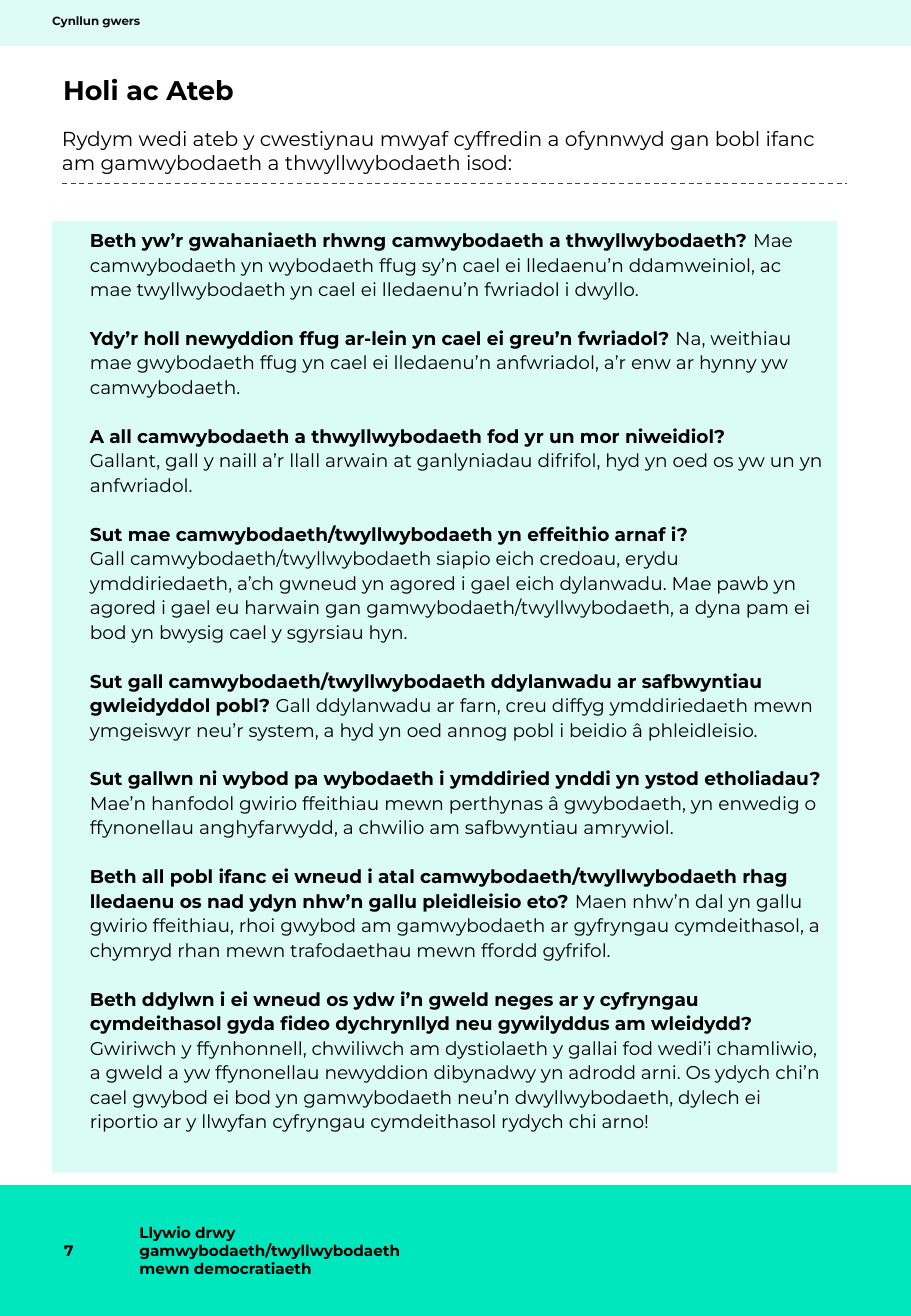
from pptx import Presentation
from pptx.dml.color import RGBColor
from pptx.enum.dml import MSO_LINE
from pptx.enum.shapes import MSO_CONNECTOR, MSO_SHAPE
from pptx.enum.text import MSO_ANCHOR as Anchor
from pptx.oxml.ns import qn
from pptx.util import Inches, Pt
from lxml.etree import SubElement

THEME = {
    "font": "Montserrat",
    "mint": "00E7BD", "black": "000000", "label": "0C0C0C", "rule": "404040",
    "label_size": 7, "footer_size": 9, "answer_size": 11,
    "intro_size": 12, "title_size": 16,
}

# Page grid
WIDTH, HEIGHT = 7.5, 10.84
MARGIN, CONTENT = 0.43, 6.46
TEXT_LEFT = MARGIN + 0.08
FOOTER_HEIGHT = 1.08
FOOTER_TOP = HEIGHT - FOOTER_HEIGHT
RULE_TOP = 1.51

# Question, answer, and whether the answer starts on its own line
QUESTIONS = [
    ("Beth yw’r gwahaniaeth rhwng camwybodaeth a thwyllwybodaeth?",
     "Mae camwybodaeth yn wybodaeth ffug sy’n cael ei lledaenu’n ddamweiniol, ac mae "
     "twyllwybodaeth yn cael ei lledaenu’n fwriadol i dwyllo.", False),
    ("Ydy’r holl newyddion ffug ar-lein yn cael ei greu’n fwriadol?",
     "Na, weithiau mae gwybodaeth ffug yn cael ei lledaenu’n anfwriadol, a’r enw ar hynny "
     "yw camwybodaeth.", False),
    ("A all camwybodaeth a thwyllwybodaeth fod yr un mor niweidiol?",
     "Gallant, gall y naill a’r llall arwain at ganlyniadau difrifol, hyd yn oed os yw un "
     "yn anfwriadol.", True),
    ("Sut mae camwybodaeth/twyllwybodaeth yn effeithio arnaf i?",
     "Gall camwybodaeth/twyllwybodaeth siapio eich credoau, erydu ymddiriedaeth, a’ch gwneud "
     "yn agored i gael eich dylanwadu. Mae pawb yn agored i gael eu harwain gan "
     "gamwybodaeth/twyllwybodaeth, a dyna pam ei bod yn bwysig cael y sgyrsiau hyn.", True),
    ("Sut gall camwybodaeth/twyllwybodaeth ddylanwadu ar safbwyntiau gwleidyddol pobl?",
     "Gall ddylanwadu ar farn, creu diffyg ymddiriedaeth mewn ymgeiswyr neu’r system, a hyd "
     "yn oed annog pobl i beidio â phleidleisio.", False),
    ("Sut gallwn ni wybod pa wybodaeth i ymddiried ynddi yn ystod etholiadau?",
     "Mae’n hanfodol gwirio ffeithiau mewn perthynas â gwybodaeth, yn enwedig o ffynonellau "
     "anghyfarwydd, a chwilio am safbwyntiau amrywiol.", False),
    ("Beth all pobl ifanc ei wneud i atal camwybodaeth/twyllwybodaeth rhag lledaenu os nad "
     "ydyn nhw’n gallu pleidleisio eto?",
     "Maen nhw’n dal yn gallu gwirio ffeithiau, rhoi gwybod am gamwybodaeth ar gyfryngau "
     "cymdeithasol, a chymryd rhan mewn trafodaethau mewn ffordd gyfrifol.", False),
    ("Beth ddylwn i ei wneud os ydw i’n gweld neges ar y cyfryngau cymdeithasol gyda fideo "
     "dychrynllyd neu gywilyddus am wleidydd?",
     "Gwiriwch y ffynhonnell, chwiliwch am dystiolaeth y gallai fod wedi’i chamliwio, a gweld "
     "a yw ffynonellau newyddion dibynadwy yn adrodd arni. Os ydych chi’n cael gwybod ei bod "
     "yn gamwybodaeth neu’n dwyllwybodaeth, dylech ei riportio ar y llwyfan cyfryngau "
     "cymdeithasol rydych chi arno!", False),
]


def add_panel(left, top, width, height, opacity):
    shape = slide.shapes.add_shape(
        MSO_SHAPE.RECTANGLE, Inches(left), Inches(top), Inches(width), Inches(height))
    shape.shadow.inherit = False
    shape.line.fill.background()
    shape.fill.solid()
    shape.fill.fore_color.rgb = RGBColor.from_string(THEME["mint"])
    if opacity < 100:
        color = shape.fill._xPr.find(".//" + qn("a:srgbClr"))
        SubElement(color, qn("a:alpha"), val=str(opacity * 1000))
    return shape


def add_run(paragraph, text, size, bold, color="black"):
    run = paragraph.add_run()
    run.text = text
    run.font.name = THEME["font"]
    run.font.size = Pt(THEME[size])
    run.font.bold = bold
    run.font.color.rgb = RGBColor.from_string(THEME[color])


presentation = Presentation()
presentation.slide_width, presentation.slide_height = Inches(WIDTH), Inches(HEIGHT)
slide = presentation.slides.add_slide(presentation.slide_layouts[6])

# Footer and header bands
add_panel(0, FOOTER_TOP, WIDTH, FOOTER_HEIGHT, 100)
add_panel(0, 0, WIDTH, 0.38, 13)

# Single-paragraph texts: place, side and top insets, anchor, spacing, type
LABELS = [
    ("Llywio drwy gamwybodaeth/twyllwybodaeth mewn democratiaeth",
     (1.05, FOOTER_TOP, 2.77, FOOTER_HEIGHT), (0.1, 0.05), Anchor.MIDDLE, 1,
     "footer_size", True, "black"),
    ("7", (MARGIN, FOOTER_TOP, 0.62, FOOTER_HEIGHT), (0.1, 0.05), Anchor.MIDDLE, 1,
     "footer_size", True, "black"),
    ("Rydym wedi ateb y cwestiynau mwyaf cyffredin a ofynnwyd gan bobl ifanc am "
     "gamwybodaeth a thwyllwybodaeth isod:",
     (TEXT_LEFT, 1.04, CONTENT, 0.8), (0, 0), Anchor.TOP, 1, "intro_size", False, "black"),
    ("Holi ac Ateb", (TEXT_LEFT + 0.01, 0.64, CONTENT, 0.44), (0, 0), Anchor.TOP, 0.9,
     "title_size", True, "black"),
    ("Cynllun gwers", (MARGIN, 0.03, 2.7, 0.28), (0, 0), Anchor.MIDDLE, 1,
     "label_size", True, "label"),
]
for text, place, (side, edge), anchor, spacing, size, bold, color in LABELS:
    frame = slide.shapes.add_textbox(*map(Inches, place)).text_frame
    frame.word_wrap = True
    frame.vertical_anchor = anchor
    frame.margin_left = frame.margin_right = Inches(side)
    frame.margin_top = frame.margin_bottom = Inches(edge)
    paragraph = frame.paragraphs[0]
    paragraph.line_spacing = spacing
    add_run(paragraph, text, size, bold, color)

# Questions and answers
frame = add_panel(MARGIN, 1.82, CONTENT, 7.84, 14).text_frame
frame.word_wrap = True
frame.vertical_anchor = Anchor.TOP
frame.margin_left, frame.margin_right = Inches(0.31), Inches(0.1)
frame.margin_top = frame.margin_bottom = Inches(0.05)
for number, (question, answer, own_line) in enumerate(QUESTIONS):
    paragraph = frame.add_paragraph() if number else frame.paragraphs[0]
    paragraph.space_before = Pt(14.5 if number else 0)
    add_run(paragraph, question if own_line else question + " ", "answer_size", True)
    if own_line:
        paragraph = frame.add_paragraph()
    add_run(paragraph, answer, "answer_size", False)
for paragraph in frame.paragraphs:
    paragraph.alignment = 1
    paragraph.line_spacing = 1.1

# Dashed rule under the introduction
rule = slide.shapes.add_connector(
    MSO_CONNECTOR.STRAIGHT, Inches(TEXT_LEFT), Inches(RULE_TOP),
    Inches(TEXT_LEFT + CONTENT), Inches(RULE_TOP))
rule.line.color.rgb = RGBColor.from_string(THEME["rule"])
rule.line.width = Pt(0.75)
rule.line.dash_style = MSO_LINE.DASH
SubElement(rule._element.spPr, qn("a:effectLst"))

presentation.save("out.pptx")
